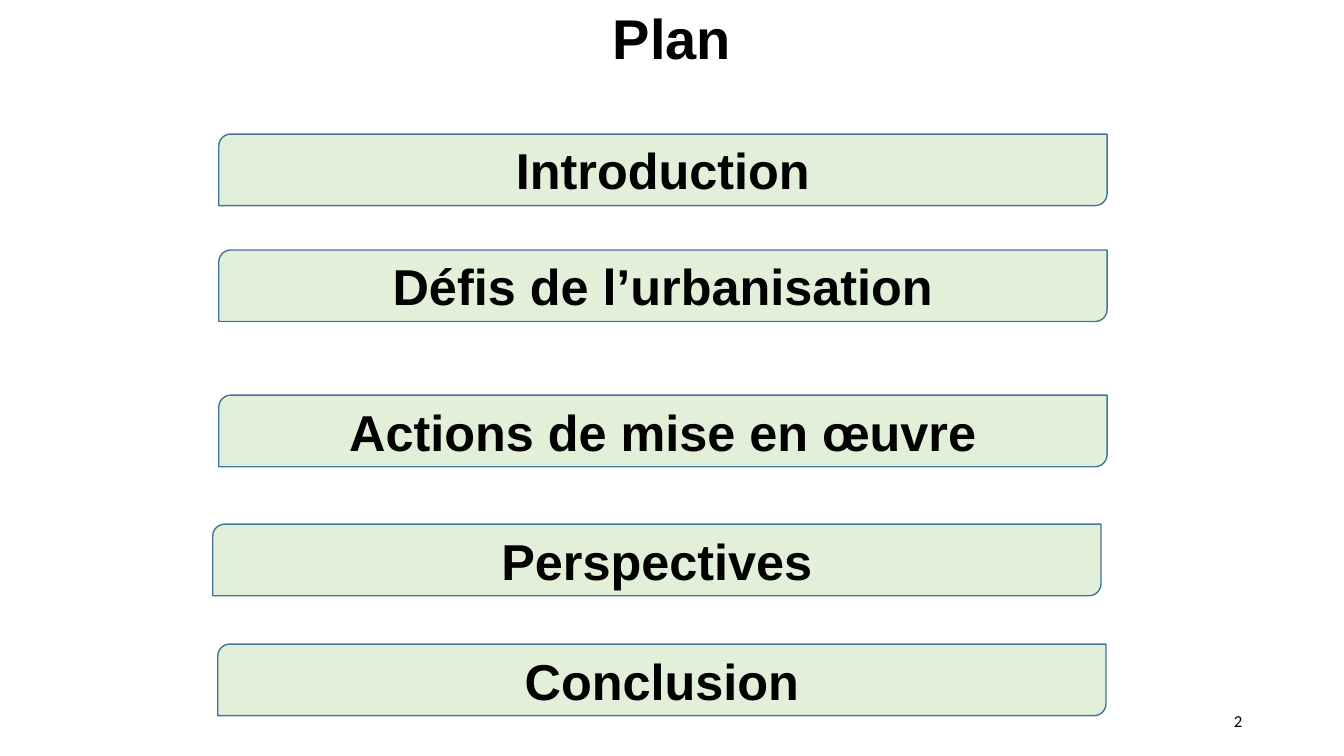
from pptx import Presentation
from pptx.dml.color import RGBColor
from pptx.enum.shapes import MSO_SHAPE
from pptx.enum.text import MSO_ANCHOR, PP_ALIGN
from pptx.util import Inches, Pt

COLORS = {"text": "000000", "bar": "E2F0D9", "outline": "43739E"}


def write(shape, text, size, font_name, bold, alignment):
    frame = shape.text_frame
    frame.word_wrap = True
    frame.vertical_anchor = MSO_ANCHOR.MIDDLE
    frame.text = text
    para = frame.paragraphs[0]
    para.alignment = alignment
    font = para.runs[0].font
    font.name = font_name
    font.size = Pt(size)
    font.bold = bold
    font.color.rgb = RGBColor.from_string(COLORS["text"])
    return para


deck = Presentation()
deck.slide_width = Inches(13.33)
deck.slide_height = Inches(7.5)
page = deck.slides.add_slide(deck.slide_layouts[6])

# Title
title = page.shapes.add_textbox(Inches(0), Inches(0), Inches(13.33), Inches(0.83))
title_para = write(title, "Plan", 40, "Arial", True, PP_ALIGN.CENTER)
title_para.line_spacing = 0.9

# Slide number
number = page.shapes.add_textbox(Inches(9.42), Inches(6.95), Inches(3), Inches(0.4))
write(number, "2", 12, "Calibri", False, PP_ALIGN.RIGHT)

# Plan sections: left, top, heading
sections = [
    (2.17, 1.33, "Introduction"),
    (2.17, 2.48, "Défis de l’urbanisation"),
    (2.17, 3.92, "Actions de mise en œuvre"),
    (2.11, 5.2, "Perspectives"),
    (2.16, 6.39, "Conclusion"),
]
for left, top, heading in sections:
    bar = page.shapes.add_shape(
        MSO_SHAPE.ROUND_2_DIAG_RECTANGLE,
        Inches(left), Inches(top), Inches(8.81), Inches(0.71),
    )
    bar.shadow.inherit = False
    bar.fill.solid()
    bar.fill.fore_color.rgb = RGBColor.from_string(COLORS["bar"])
    bar.line.color.rgb = RGBColor.from_string(COLORS["outline"])
    bar.line.width = Pt(1)
    write(bar, heading, 36, "Arial", True, PP_ALIGN.CENTER)

deck.save("out.pptx")
